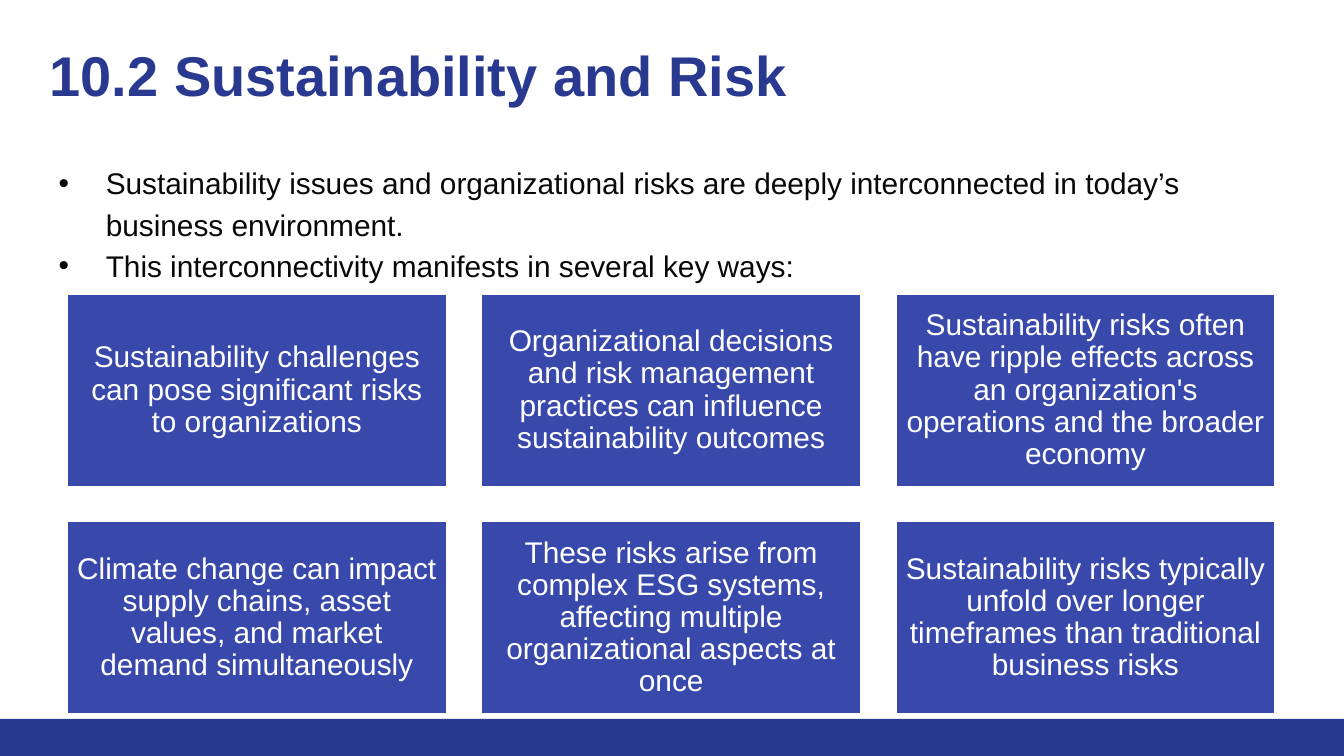
from lxml.etree import SubElement
from pptx import Presentation
from pptx.dml.color import RGBColor
from pptx.enum.shapes import MSO_SHAPE
from pptx.enum.text import MSO_ANCHOR, PP_ALIGN
from pptx.oxml.ns import qn
from pptx.util import Cm, Pt

COLORS = {"navy": "2A3990", "indigo": "3949AB", "ink": "080808", "white": "FFFFFF"}


def set_frame(frame, inset, anchor):
    layout = {"word_wrap": True, "vertical_anchor": anchor}
    layout.update({f"margin_{side}": Cm(inset) for side in ("left", "top", "right", "bottom")})
    for key, value in layout.items():
        setattr(frame, key, value)


def write(paragraph, text, color, size, bold=False):
    paragraph.text = text
    for key, value in {"name": "Arial", "size": Pt(size), "bold": bold}.items():
        setattr(paragraph.runs[0].font, key, value)
    paragraph.runs[0].font.color.rgb = RGBColor.from_string(COLORS[color])


prs = Presentation()
prs.slide_width, prs.slide_height = Cm(25.4), Cm(14.29)
slide = prs.slides.add_slide(prs.slide_layouts[6])

# Footer band
footer = slide.shapes.add_shape(MSO_SHAPE.RECTANGLE, 0, Cm(13.59), prs.slide_width, Cm(0.7))
footer.shadow.inherit = False
footer.fill.solid()
footer.fill.fore_color.rgb = RGBColor.from_string(COLORS["navy"])
footer.line.fill.background()

# Title
title = slide.shapes.add_textbox(Cm(0.69), Cm(0.51), Cm(23.37), Cm(2.26)).text_frame
set_frame(title, 0.25, MSO_ANCHOR.TOP)
write(title.paragraphs[0], "10.2 Sustainability and Risk", "navy", 30, bold=True)

# Bulleted introduction
points = [
    "Sustainability issues and organizational risks are deeply interconnected "
    "in today’s business environment.",
    "This interconnectivity manifests in several key ways:",
]
intro = slide.shapes.add_textbox(Cm(0.86), Cm(2.77), Cm(23.67), Cm(10.03)).text_frame
set_frame(intro, 0.25, MSO_ANCHOR.TOP)
for i, point in enumerate(points):
    paragraph = intro.add_paragraph() if i else intro.paragraphs[0]
    properties = paragraph._p.get_or_add_pPr()
    properties.set("marL", str(Cm(0.89)))
    properties.set("indent", str(-Cm(0.89)))
    bullet_color = SubElement(properties, qn("a:buClr"))
    SubElement(bullet_color, qn("a:srgbClr"), val=COLORS["ink"])
    SubElement(properties, qn("a:buFont"), typeface="Arial")
    SubElement(properties, qn("a:buChar"), char="•")
    paragraph.line_spacing = 1.15
    write(paragraph, point, "ink", 16)

# Grid of risk cards, three to a row
risks = [
    "Sustainability challenges can pose significant risks to organizations",
    "Organizational decisions and risk management practices can influence sustainability outcomes",
    "Sustainability risks often have ripple effects across an organization's operations "
    "and the broader economy",
    "Climate change can impact supply chains, asset values, and market demand simultaneously",
    "These risks arise from complex ESG systems, affecting multiple organizational aspects at once",
    "Sustainability risks typically unfold over longer timeframes than traditional business risks",
]
card_width, card_height, gap = 7.21, 3.6 + 0.08, 0.62
for i, risk in enumerate(risks):
    row, column = divmod(i, 3)
    card = slide.shapes.add_shape(
        MSO_SHAPE.RECTANGLE,
        Cm(1.25 + column * (card_width + gap)), Cm(5.54 + row * (card_height + gap)),
        Cm(card_width), Cm(card_height))
    card.shadow.inherit = False
    card.fill.solid()
    card.fill.fore_color.rgb = RGBColor.from_string(COLORS["indigo"])
    card.line.color.rgb = RGBColor.from_string(COLORS["white"])
    card.line.width = Pt(2)
    set_frame(card.text_frame, 0.17, MSO_ANCHOR.MIDDLE)
    paragraph = card.text_frame.paragraphs[0]
    paragraph.alignment = PP_ALIGN.CENTER
    paragraph.line_spacing = 0.9
    write(paragraph, risk, "white", 16)

prs.save("out.pptx")
